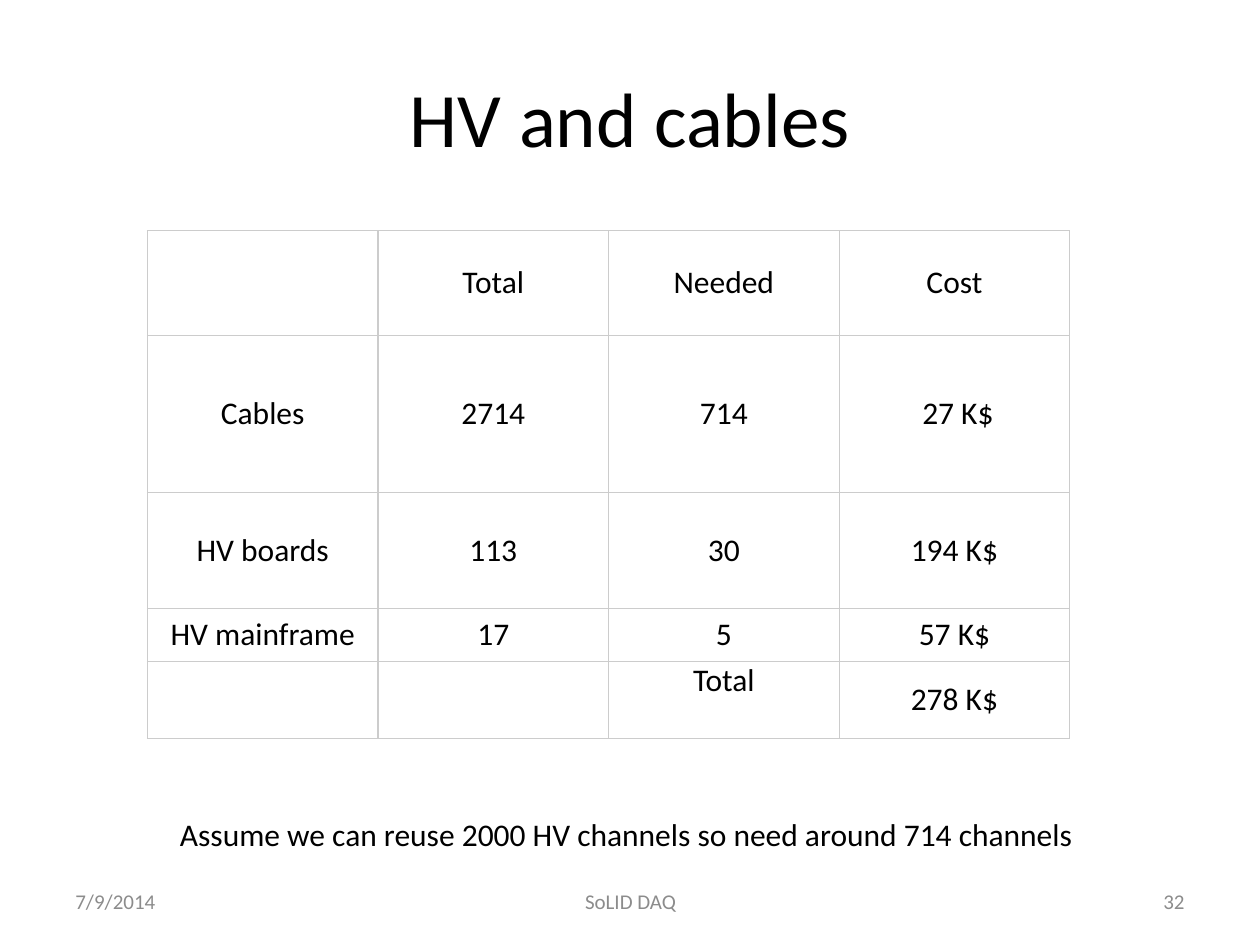
from lxml import etree
from pptx import Presentation
from pptx.dml.color import RGBColor
from pptx.enum.text import MSO_ANCHOR, PP_ALIGN
from pptx.oxml.ns import qn
from pptx.util import Inches, Pt

LEFT, CENTER, RIGHT = PP_ALIGN.LEFT, PP_ALIGN.CENTER, PP_ALIGN.RIGHT
TOP, MIDDLE = MSO_ANCHOR.TOP, MSO_ANCHOR.MIDDLE
BLACK = RGBColor(0x00, 0x00, 0x00)
GREY = RGBColor(0x8C, 0x8C, 0x8C)
RULE = RGBColor(0xCC, 0xCC, 0xCC)


def write(frame, text, size, color=BLACK, align=CENTER, anchor=MIDDLE):
    """Set one paragraph of formatted text."""
    frame.vertical_anchor = anchor
    paragraph = frame.paragraphs[0]
    paragraph.alignment = align
    run = paragraph.add_run()
    run.text = text
    formats = {"name": "Calibri", "size": Pt(size)}
    for attribute, value in formats.items():
        setattr(run.font, attribute, value)
    run.font.color.rgb = color


def add_borders(cell):
    """Draw a thin rule on each side of a cell, ahead of its fill."""
    properties = cell._tc.get_or_add_tcPr()
    for position, side in enumerate(("a:lnL", "a:lnR", "a:lnT", "a:lnB")):
        line = etree.Element(qn(side), w=str(Pt(0.75)))
        fill = etree.SubElement(line, qn("a:solidFill"))
        etree.SubElement(fill, qn("a:srgbClr"), val=str(RULE))
        properties.insert(position, line)


deck = Presentation()
deck.slide_width, deck.slide_height = Inches(10), Inches(7.5)
slide = deck.slides.add_slide(deck.slide_layouts[5])

# Title
title = slide.shapes.title
title.left, title.top = Inches(0.5), Inches(0.3)
title.width, title.height = Inches(9), Inches(1.25)
write(title.text_frame, "HV and cables", 44)

# Cost table
costs = [
    ("", "Total", "Needed", "Cost"),
    ("Cables", "2714", "714", " 27 K$"),
    ("HV boards", "113", "30", "194 K$"),
    ("HV mainframe", "17", "5", "57 K$"),
    ("", "", "Total", "278 K$"),
]
row_heights = [0.83, 1.25, 0.92, 0.42, 0.61]
column_width = 1.83
cost_table = slide.shapes.add_table(
    len(costs), len(costs[0]), Inches(1.17), Inches(1.83),
    Inches(column_width * len(costs[0])), Inches(sum(row_heights))).table
cost_table.first_row = cost_table.horz_banding = False
for column in cost_table.columns:
    column.width = Inches(column_width)
margins = {"margin_left": 0.03, "margin_right": 0.03,
           "margin_top": 0, "margin_bottom": 0}
for r, (height, entries) in enumerate(zip(row_heights, costs)):
    cost_table.rows[r].height = Inches(height)
    for c, entry in enumerate(entries):
        cell = cost_table.cell(r, c)
        cell.fill.background()
        add_borders(cell)
        for attribute, value in margins.items():
            setattr(cell, attribute, Inches(value))
        # The label of the sum sits at the top of its cell
        is_sum_label = r == len(costs) - 1 and entry == "Total"
        cell.vertical_anchor = TOP if is_sum_label else MIDDLE
        if entry:
            write(cell.text_frame, entry, 18, anchor=cell.vertical_anchor)

# Assumption and footer line
notes = [
    ("Assume we can reuse 2000 HV channels so need around 714 channels",
     1.33, 6.42, 7.32, 18, BLACK, LEFT, TOP),
    ("7/9/2014", 0.5, 6.95, 2.33, 12, GREY, LEFT, MIDDLE),
    ("SoLID DAQ", 3.42, 6.95, 3.17, 12, GREY, CENTER, MIDDLE),
    ("32", 7.17, 6.95, 2.33, 12, GREY, RIGHT, MIDDLE),
]
for text, left, top, width, size, color, align, anchor in notes:
    note = slide.shapes.add_textbox(
        Inches(left), Inches(top), Inches(width), Inches(0.4))
    note.text_frame.word_wrap = size == 12
    write(note.text_frame, text, size, color, align, anchor)

deck.save("out.pptx")
